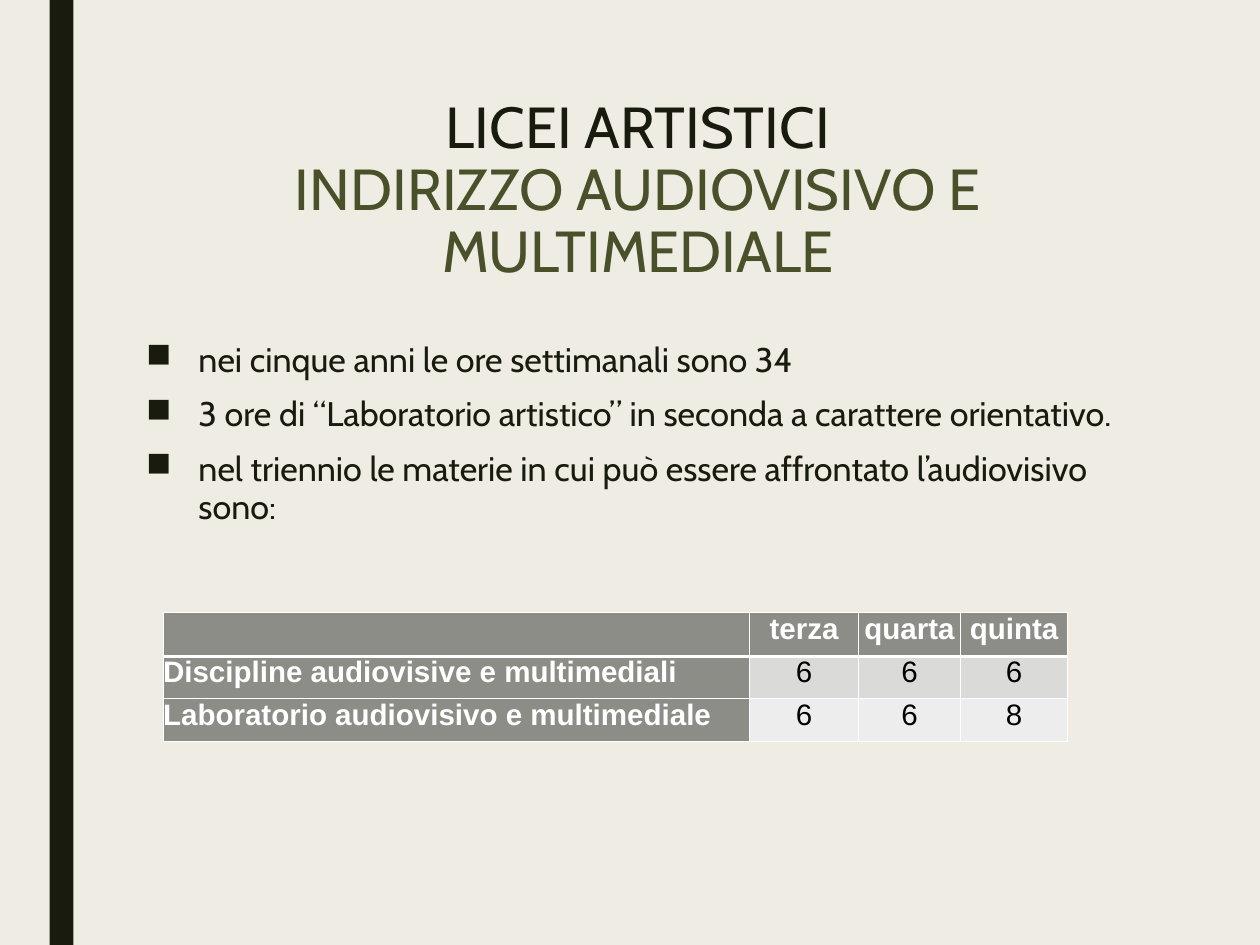
from lxml import etree
from pptx import Presentation
from pptx import util as u
from pptx.dml.color import RGBColor
from pptx.enum import shapes, text
from pptx.oxml import ns

INK, OLIVE, PAPER, WHITE, GREY = "191B0E", "4A502A", "EFEDE3", "FFFFFF", "8C8D86"


def rgb(value):
    return RGBColor.from_string(value)


def paint(item, color):
    item.fill.solid()
    item.fill.fore_color.rgb = rgb(color)


def color_fill(parent, tag, color):
    fill = etree.SubElement(parent, ns.qn(tag))
    etree.SubElement(fill, ns.qn("a:srgbClr"), val=color)


class LiceoSlide:
    """Builds one slide in the olive and paper style."""

    def __init__(self, deck):
        self.font = "Cabin"
        self.table_font = "Arial"
        self.slide = deck.slides.add_slide(deck.slide_layouts[6])
        paint(self.slide.background, PAPER)

    def bar(self, left, top, width, height, color):
        stripe = self.slide.shapes.add_shape(
            shapes.MSO_SHAPE.RECTANGLE, *map(u.Inches, (left, top, width, height)))
        stripe.shadow.inherit = False
        paint(stripe, color)
        stripe.line.fill.background()

    def style(self, paragraph, wording, font, size, color, bold=False):
        paragraph.text = wording
        paragraph.font.name = font
        paragraph.font.size = u.Pt(size)
        paragraph.font.color.rgb = rgb(color)
        paragraph.font.bold = bold

    def text(self, left, top, width, height, lines, size, spacing):
        frame = self.slide.shapes.add_textbox(
            *map(u.Inches, (left, top, width, height))).text_frame
        frame.word_wrap = True
        frame.margin_left = frame.margin_right = u.Inches(0.05)
        frame.margin_top = frame.margin_bottom = u.Inches(0.05)
        for number, (wording, color) in enumerate(lines):
            paragraph = frame.add_paragraph() if number else frame.paragraphs[0]
            self.style(paragraph, wording, self.font, size, color)
            paragraph.line_spacing = spacing
        return frame.paragraphs

    def title(self, *box, lines):
        for paragraph in self.text(*box, lines, 47, 0.89):
            paragraph.alignment = text.PP_ALIGN.CENTER

    def bullets(self, *box, points):
        lines = [(point, INK) for point in points]
        for number, paragraph in enumerate(self.text(*box, lines, 27.7, 0.94)):
            paragraph.space_before = u.Pt(13 if number else 0)
            props = paragraph._p.get_or_add_pPr()
            indent = u.Inches(0.59)
            props.set("marL", str(indent))
            props.set("indent", str(-indent))
            mark_color = etree.Element(ns.qn("a:buClr"))
            etree.SubElement(mark_color, ns.qn("a:srgbClr"), val=INK)
            mark = etree.Element(ns.qn("a:buChar"), char="■")
            place = props.index(props.find(ns.qn("a:defRPr")))
            props[place:place] = [mark_color, mark]

    def borders(self, cell, top, bottom):
        props = cell._tc.get_or_add_tcPr()
        for side, points in zip("LRTB", (1, 1, top, bottom)):
            line = etree.SubElement(props, ns.qn(f"a:ln{side}"), w=str(u.Pt(points)))
            color_fill(line, "a:solidFill", WHITE)

    def table(self, left, top, widths, heights, rows):
        hours = self.slide.shapes.add_table(
            len(heights), len(widths), u.Inches(left), u.Inches(top),
            u.Inches(sum(widths)), u.Inches(sum(heights))).table
        for column, width in zip(hours.columns, widths):
            column.width = u.Inches(width)
        for r, (height, row) in enumerate(zip(heights, rows)):
            hours.rows[r].height = u.Inches(height)
            for c, wording in enumerate(row):
                cell = hours.cell(r, c)
                heading = r == 0 or c == 0
                cell.margin_left = cell.margin_right = 0
                cell.margin_top = cell.margin_bottom = 0
                self.borders(cell, 3 if r == 1 else 1, 3 if r == 0 else 1)
                paint(cell, GREY if heading else ("DADAD8" if r % 2 else "EDEDED"))
                label = cell.text_frame.paragraphs[0]
                self.style(label, wording, self.table_font, 24,
                           WHITE if heading else "000000", heading)
                label.alignment = text.PP_ALIGN.CENTER if c else text.PP_ALIGN.LEFT


def main():
    deck = Presentation()
    deck.slide_width, deck.slide_height = u.Inches(14.22), u.Inches(10.67)
    page = LiceoSlide(deck)
    page.bar(0.56, 0, 0.27, 10.67, INK)
    page.title(1.6, 1.07, 11.2, 2.31, lines=[
        ("LICEI ARTISTICI", INK),
        ("INDIRIZZO AUDIOVISIVO E MULTIMEDIALE", OLIVE),
    ])
    page.bullets(1.6, 3.81, 11.2, 2.68, points=[
        "nei cinque anni le ore settimanali sono 34",
        "3 ore di “Laboratorio artistico” in seconda a carattere orientativo.",
        "nel triennio le materie in cui può essere affrontato l’audiovisivo sono:",
    ])
    page.table(1.84, 6.92, [6.62, 1.23, 1.15, 1.21], [0.49, 0.48, 0.48], [
        ["", "terza", "quarta", "quinta"],
        ["Discipline audiovisive e multimediali", "6", "6", "6"],
        ["Laboratorio audiovisivo e multimediale", "6", "6", "8"],
    ])
    deck.save("out.pptx")


if __name__ == "__main__":
    main()
